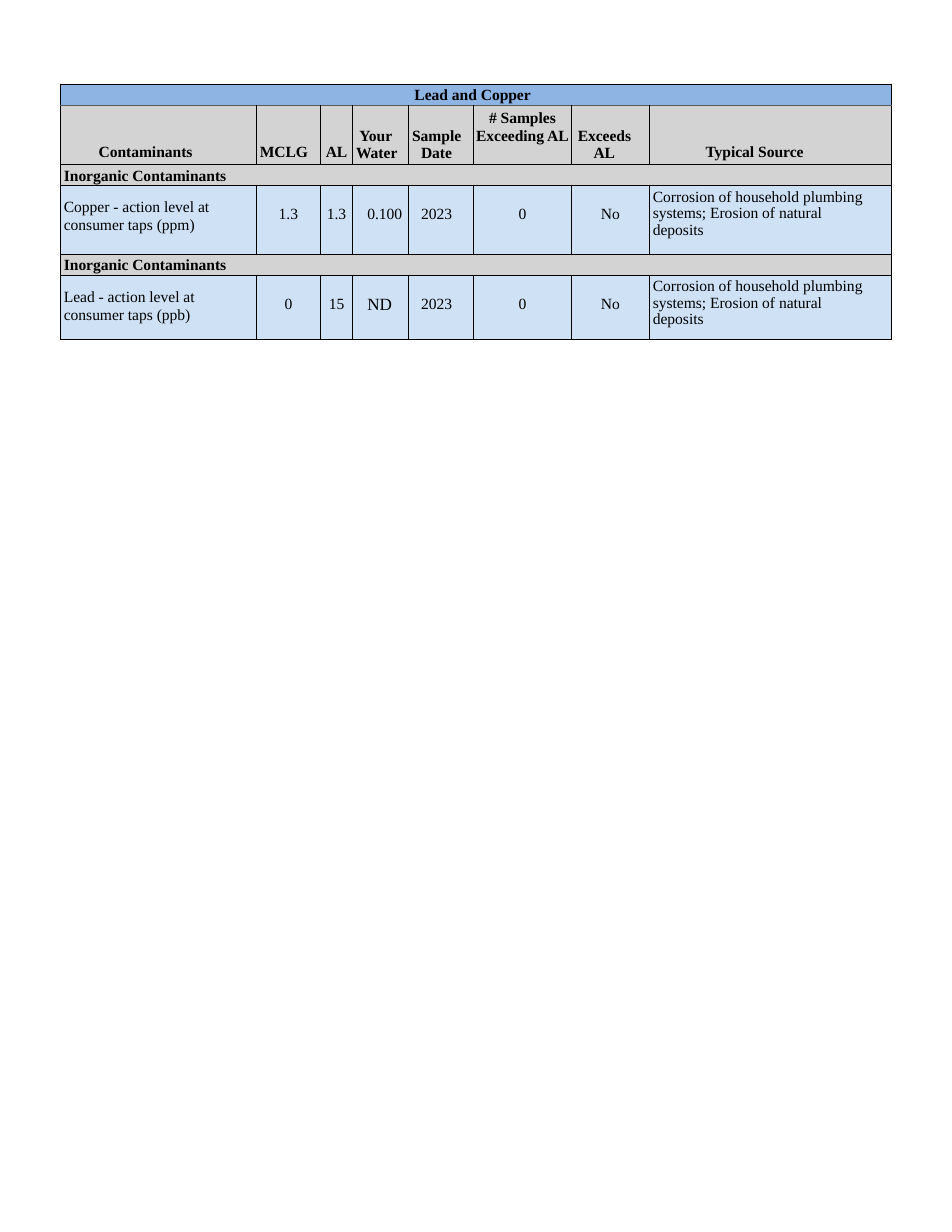
from lxml.etree import SubElement
from pptx import Presentation
from pptx.dml.color import RGBColor
from pptx.enum.text import MSO_ANCHOR, PP_ALIGN
from pptx.oxml.ns import qn
from pptx.util import Inches, Pt

BLACK = RGBColor(0x00, 0x00, 0x00)
RULE_GRAY = RGBColor(0x59, 0x59, 0x59)
TITLE_BLUE = RGBColor(0x8E, 0xB4, 0xE3)
HEADER_GRAY = RGBColor(0xD3, 0xD3, 0xD3)
DATA_BLUE = RGBColor(0xCF, 0xE2, 0xF5)

FONT = "Times New Roman"
COLUMN_WIDTHS = [1.75, 0.57, 0.29, 0.5, 0.58, 0.87, 0.7, 2.16]
ROW_HEIGHTS = [0.19, 0.53, 0.19, 0.61, 0.19, 0.57]
CENTER = "center"

# Text, top margin, and either CENTER or (left indent, first-line indent)
HEADERS = [
    ("Contaminants", 0.34, (0.34, 0)),
    ("MCLG", 0.34, (0.03, 0)),
    ("AL", 0.34, CENTER),
    ("Your Water", 0.19, (0.03, 0.03)),
    ("Sample Date", 0.19, (0.11, -0.08)),
    ("# Samples Exceeding AL", 0.03, CENTER),
    ("Exceeds AL", 0.19, (0.2, -0.14)),
    ("Typical Source", 0.34, (0.5, 0)),
]
SECTION = "Inorganic Contaminants"
SOURCE = "Corrosion of household plumbing systems; Erosion of natural deposits"
COPPER = ["Copper - action level at consumer taps (ppm)",
          "1.3", "1.3", "0.100", "2023", "0", "No", SOURCE]
LEAD = ["Lead - action level at consumer taps (ppb)",
        "0", "15", "ND", "2023", "0", "No", SOURCE]
VALUE_PLACES = [CENTER, CENTER, (0.13, 0), (0.11, 0), CENTER, CENTER]


def set_borders(cell, top_color=BLACK, top_width=0.72):
    """Draw all four edges; they must precede the fill in the cell properties."""
    properties = cell._tc.get_or_add_tcPr()
    for edge in ("lnL", "lnR", "lnT", "lnB"):
        color, width = (top_color, top_width) if edge == "lnT" else (BLACK, 0.72)
        line = SubElement(properties, qn(f"a:{edge}"), w=str(Pt(width)))
        solid = SubElement(line, qn("a:solidFill"))
        SubElement(solid, qn("a:srgbClr"), val=str(color))


def fill_cell(cell, text, fill, top=0, place=(0.03, 0), right=0, bold=False,
              size=10, spacing=Pt(11.5)):
    cell.margin_left = cell.margin_bottom = 0
    cell.margin_top, cell.margin_right = Inches(top), Inches(right)
    cell.vertical_anchor = MSO_ANCHOR.TOP
    cell.fill.solid()
    cell.fill.fore_color.rgb = fill
    cell.text_frame.text = text
    para = cell.text_frame.paragraphs[0]
    para.line_spacing = spacing
    if place == CENTER:
        para.alignment = PP_ALIGN.CENTER
    else:
        para.alignment = PP_ALIGN.LEFT
        left, first = place
        properties = para._p.get_or_add_pPr()
        properties.set("marL", str(Inches(left)))
        properties.set("indent", str(Inches(first)))
    font = para.runs[0].font
    font.name, font.size, font.bold = FONT, Pt(size), bold
    font.color.rgb = BLACK


def add_band(table, row, text, fill, **style):
    """Fill a row that is merged across the whole table."""
    last = len(COLUMN_WIDTHS) - 1
    table.cell(row, 0).merge(table.cell(row, last))
    fill_cell(table.cell(row, 0), text, fill, top=0.02, bold=True, **style)


def add_header(table, row):
    for column, (text, top, place) in enumerate(HEADERS):
        fill_cell(table.cell(row, column), text, HEADER_GRAY, top, place, bold=True)


def add_data(table, row, texts):
    name, *values, source = texts
    fill_cell(table.cell(row, 0), name, DATA_BLUE, top=0.11, right=0.2)
    for column, (value, place) in enumerate(zip(values, VALUE_PLACES), 1):
        size = 11 if value == "ND" else 10
        fill_cell(table.cell(row, column), value, DATA_BLUE, 0.18, place,
                  size=size, spacing=1.0)
    fill_cell(table.cell(row, len(texts) - 1), source, DATA_BLUE, top=0.03,
              right=0.25, spacing=0.96)


def add_results_table(page):
    table = page.shapes.add_table(
        len(ROW_HEIGHTS), len(COLUMN_WIDTHS), Inches(0.54), Inches(0.75),
        Inches(sum(COLUMN_WIDTHS)), Inches(sum(ROW_HEIGHTS))).table
    table.first_row = table.horz_banding = False
    for column, width in zip(table.columns, COLUMN_WIDTHS):
        column.width = Inches(width)
    for index, (row, height) in enumerate(zip(table.rows, ROW_HEIGHTS)):
        row.height = Inches(height)
        for cell in row.cells:
            if index == 1:
                set_borders(cell, RULE_GRAY, 1)
            else:
                set_borders(cell)
            # Small type keeps unused merged cells from stretching the row
            cell.margin_top = cell.margin_bottom = 0
            cell.text_frame.paragraphs[0].font.size = Pt(10)
    return table


def main():
    deck = Presentation()
    deck.slide_width, deck.slide_height = Inches(8.5), Inches(11)
    page = deck.slides.add_slide(deck.slide_layouts[6])
    table = add_results_table(page)
    add_band(table, 0, "Lead and Copper", TITLE_BLUE, place=CENTER, right=0.06)
    add_header(table, 1)
    for row, texts in ((2, COPPER), (4, LEAD)):
        add_band(table, row, SECTION, HEADER_GRAY)
        add_data(table, row + 1, texts)
    deck.save("out.pptx")


if __name__ == "__main__":
    main()
